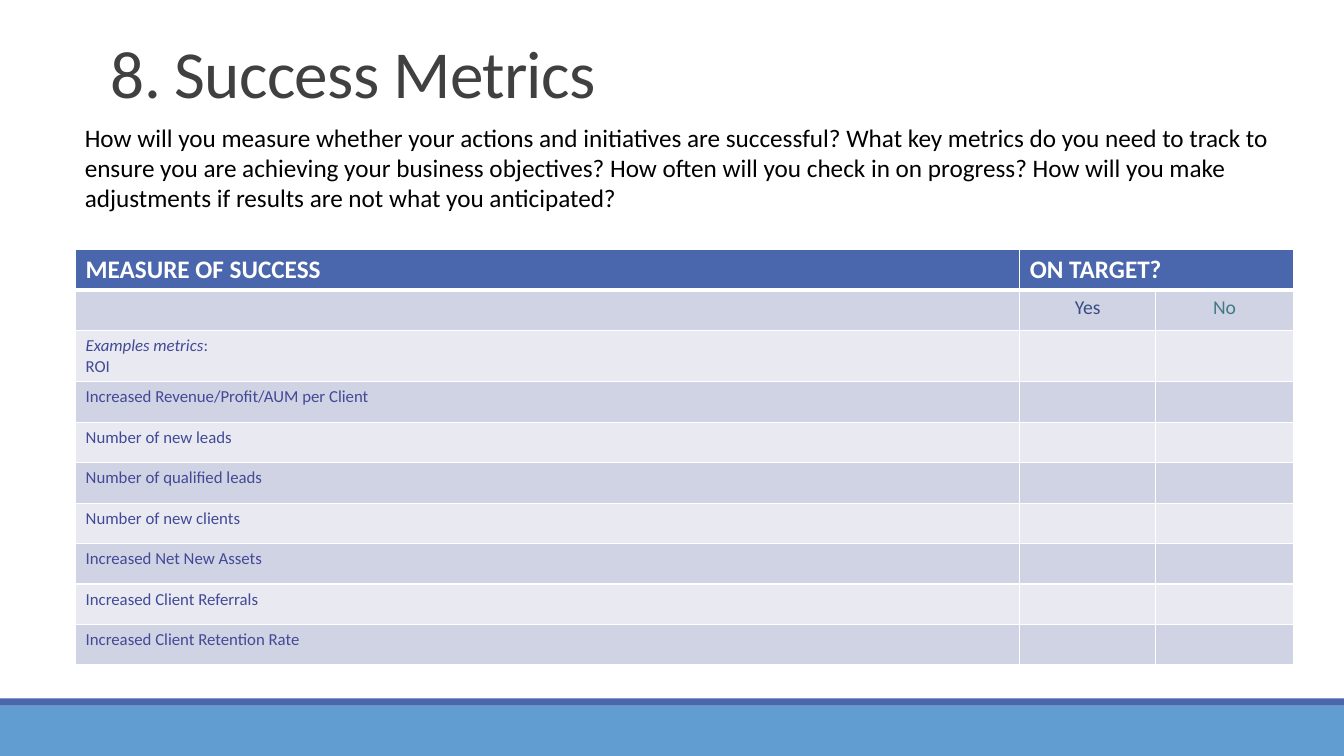
from lxml import etree
from pptx import Presentation
from pptx import util as u
from pptx.dml.color import RGBColor
from pptx.enum import shapes, text
from pptx.oxml import ns

Pt = u.Pt
WHITE = RGBColor(0xFF, 0xFF, 0xFF)
BLACK = RGBColor(0, 0, 0)
GRAY = RGBColor(0x40, 0x40, 0x40)
BLUE = RGBColor(0x4A, 0x66, 0xAC)
SKY = RGBColor(0x62, 0x9D, 0xD1)
NAVY = RGBColor(0x38, 0x4C, 0x81)
TEAL = RGBColor(0x41, 0x7B, 0x85)
INDIGO = RGBColor(0x42, 0x49, 0x96)
DARK = RGBColor(0xD0, 0xD3, 0xE3)
LIGHT = RGBColor(0xE9, 0xEA, 0xF1)

METRICS = [
    "Increased Revenue/Profit/AUM per Client",
    "Number of new leads",
    "Number of qualified leads",
    "Number of new clients",
    "Increased Net New Assets",
    "Increased Client Referrals",
    "Increased Client Retention Rate",
]


def write(para, words, size=12, color=INDIGO, bold=False, italic=False,
          align=None, space=None, track=None):
    run = para.add_run()
    run.text = words
    font = run.font
    font.name = "Calibri"
    font.size = Pt(size)
    font.color.rgb = color
    font.bold = bold
    font.italic = italic
    if align is not None:
        para.alignment = align
    if space:
        para.line_spacing = space
    if track:
        run._r.get_or_add_rPr().set("spc", str(track))


def edge(cell, base):
    props = cell._tc.get_or_add_tcPr()
    for spot, side in enumerate("LRTB"):
        width = base if side == "B" else 1
        line = etree.Element(ns.qn(f"a:ln{side}"), w=str(Pt(width)))
        fill = etree.SubElement(line, ns.qn("a:solidFill"))
        etree.SubElement(fill, ns.qn("a:srgbClr"), val=str(WHITE))
        props.insert(spot, line)


class Deck:
    def __init__(self):
        self.show = Presentation()
        self.show.slide_width = Pt(960)
        self.show.slide_height = Pt(540)
        self.slide = self.show.slides.add_slide(self.show.slide_layouts[6])

    def bar(self, top, height, color):
        bar = self.slide.shapes.add_shape(
            shapes.MSO_SHAPE.RECTANGLE, 0, Pt(top), Pt(960), Pt(height))
        bar.shadow.inherit = False
        bar.fill.solid()
        bar.fill.fore_color.rgb = color
        bar.line.fill.background()

    def label(self, box, words, anchor=text.MSO_ANCHOR.TOP, **style):
        frame = self.slide.shapes.add_textbox(*map(Pt, box)).text_frame
        frame.word_wrap = True
        frame.vertical_anchor = anchor
        write(frame.paragraphs[0], words, **style)

    def grid(self, left, top, widths, heights):
        table = self.slide.shapes.add_table(
            len(heights), len(widths), Pt(left), Pt(top),
            Pt(sum(widths)), Pt(sum(heights))).table
        for col, width in zip(table.columns, widths):
            col.width = Pt(width)
        for num, (row, height) in enumerate(zip(table.rows, heights)):
            row.height = Pt(height)
            for cell in row.cells:
                cell.fill.solid()
                cell.fill.fore_color.rgb = (
                    BLUE if num == 0 else DARK if num % 2 else LIGHT)
                edge(cell, 1 if num else 3)
        return table

    def save(self):
        self.show.save("out.pptx")


def main():
    deck = Deck()
    deck.bar(504, 36, SKY)
    deck.bar(498.75, 5.25, BLUE)
    deck.label((72, 22.5, 888, 61), "8. Success Metrics",
               anchor=text.MSO_ANCHOR.BOTTOM, size=48, color=GRAY,
               space=0.85, track=-50)
    deck.label((53.5, 83.5, 870, 94),
               "How will you measure whether your actions and initiatives are "
               "successful? What key metrics do you need to track to ensure "
               "you are achieving your business objectives? How often will you "
               "check in on progress? How will you make adjustments if results "
               "are not what you anticipated?", size=18, color=BLACK)

    table = deck.grid(54, 178.5, [674.5, 97, 98.5],
                      [28.9] * 2 + [36.5] + [28.9] * len(METRICS))
    table.cell(0, 1).merge(table.cell(0, 2))

    def first(row, col):
        return table.cell(row, col).text_frame.paragraphs[0]

    for col, words in enumerate(["MEASURE OF SUCCESS", "ON TARGET?"]):
        write(first(0, col), words, size=18, color=WHITE, bold=True)
    for col, (words, color) in enumerate([("Yes", NAVY), ("No", TEAL)], 1):
        write(first(1, col), words, size=14, color=color,
              align=text.PP_ALIGN.CENTER)
    write(first(2, 0), "Examples metrics", italic=True)
    write(first(2, 0), ":")
    write(table.cell(2, 0).text_frame.add_paragraph(), "ROI")
    for row, words in enumerate(METRICS, 3):
        write(first(row, 0), words)
    deck.save()


if __name__ == "__main__":
    main()
